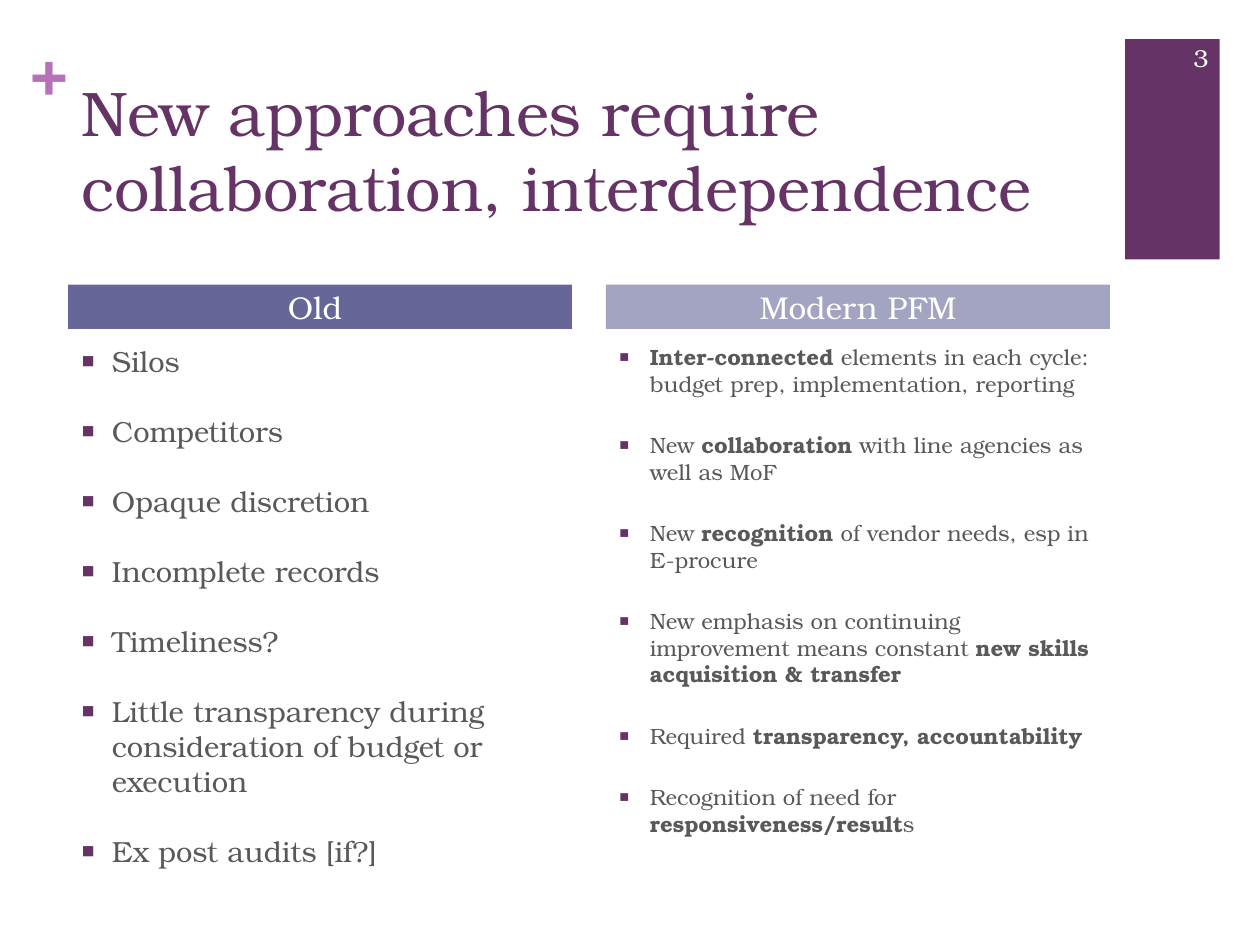
from lxml import etree
from pptx import Presentation
from pptx import util as u
from pptx.dml.color import RGBColor
from pptx.enum import shapes, text
from pptx.oxml import ns

PURPLE, ORCHID, SLATE, LAVENDER = "663366", "B870B8", "666699", "A3A3C2"
GREY, WHITE = "595959", "FFFFFF"
COLUMN_WIDTH = 4

# Asterisks enclose bold words
COLUMNS = [
    {"left": 0.54, "heading": "Old ", "fill": SLATE, "size": 16.6, "points": [
        "Silos",
        "Competitors",
        "Opaque discretion",
        "Incomplete records",
        "Timeliness?",
        "Little transparency during consideration of budget or execution",
        "Ex post audits [if?]",
    ]},
    {"left": 4.81, "heading": "Modern PFM", "fill": LAVENDER, "size": 12.6, "points": [
        "*Inter-connected *elements in each cycle: budget prep, implementation, reporting",
        "New *collaboration* with line agencies as well as MoF",
        "New *recognition *of vendor needs, esp in E-procure",
        "New emphasis on continuing improvement means constant "
        "*new skills acquisition & transfer*",
        "Required *transparency, accountability*",
        "Recognition of need for *responsiveness/result*s",
    ]},
]


def color(value):
    return RGBColor.from_string(value)


def set_all(target, values):
    for name, value in values.items():
        setattr(target, name, value)


class SlideBuilder:
    font = "TeX Gyre Bonum"

    def __init__(self, deck):
        self.page = deck.slides.add_slide(deck.slide_layouts[5])

    def add_text(self, para, content, size, ink, align=text.PP_ALIGN.LEFT):
        para.alignment = align
        for index, part in enumerate(content.split("*")):
            if part:
                span = para.add_run()
                span.text = part
                set_all(span.font, {"name": self.font, "size": u.Pt(size),
                                    "bold": index % 2 == 1})
                span.font.color.rgb = color(ink)

    def frame(self, box, **values):
        defaults = {"word_wrap": True, "auto_size": text.MSO_AUTO_SIZE.NONE,
                    "vertical_anchor": text.MSO_ANCHOR.TOP}
        set_all(box.text_frame, {**defaults, **values})
        return box.text_frame

    def title(self, place, content):
        box = self.page.shapes.title
        names = ("left", "top", "width", "height")
        set_all(box, dict(zip(names, map(u.Inches, place))))
        self.add_text(self.frame(box).paragraphs[0], content, 36, PURPLE)

    def bar(self, place, fill):
        box = self.page.shapes.add_shape(
            shapes.MSO_SHAPE.RECTANGLE, *map(u.Inches, place))
        box.shadow.inherit = False
        box.fill.solid()
        box.fill.fore_color.rgb = color(fill)
        box.line.fill.background()
        return box

    def heading(self, place, content, fill):
        frame = self.frame(self.bar(place, fill), margin_top=0, margin_bottom=0,
                           vertical_anchor=text.MSO_ANCHOR.MIDDLE)
        self.add_text(frame.paragraphs[0], content, 18, WHITE, text.PP_ALIGN.CENTER)

    def label(self, place, content, size, ink, align=text.PP_ALIGN.LEFT, **values):
        box = self.page.shapes.add_textbox(*map(u.Inches, place))
        self.add_text(self.frame(box, **values).paragraphs[0], content, size, ink, align)

    def bullets(self, place, points, size):
        box = self.page.shapes.add_textbox(*map(u.Inches, place))
        frame = self.frame(box)
        for index, point in enumerate(points):
            para = frame.add_paragraph() if index else frame.paragraphs[0]
            para.space_before = u.Pt(20)
            self.add_text(para, point, size, GREY)
            self.add_bullet(para)

    def add_bullet(self, para):
        props = para._p.get_or_add_pPr()
        props.set("marL", str(u.Inches(0.25)))
        props.set("indent", str(u.Inches(-0.25)))
        tint = etree.SubElement(props, ns.qn("a:buClr"))
        etree.SubElement(tint, ns.qn("a:srgbClr"), val=PURPLE)
        etree.SubElement(props, ns.qn("a:buSzPct"), val="75000")
        etree.SubElement(props, ns.qn("a:buFont"), typeface=self.font)
        etree.SubElement(props, ns.qn("a:buChar"), char="■")


def main():
    deck = Presentation()
    set_all(deck, {"slide_width": u.Inches(10), "slide_height": u.Inches(7.5)})
    slide = SlideBuilder(deck)

    # Corner block, plus sign and title
    slide.bar((8.93, 0.31, 0.75, 1.75), PURPLE)
    margins = ("margin_left", "margin_top", "margin_right", "margin_bottom")
    slide.label((0.24, 0.25, 0.29, 0.61), "*+*", 36, ORCHID,
                word_wrap=False, **dict.fromkeys(margins, 0))
    slide.title((0.55, 0.53, 8.26, 1.22),
                "New approaches require collaboration, interdependence")

    # Old and modern columns
    for column in COLUMNS:
        left = column["left"]
        slide.heading((left, 2.26, COLUMN_WIDTH, 0.35), column["heading"], column["fill"])
        slide.bullets((left, 2.68, COLUMN_WIDTH, 4.02), column["points"], column["size"])

    # Slide number
    slide.label((9.08, 0.26, 0.61, 0.4), "3", 14, WHITE, text.PP_ALIGN.RIGHT,
                vertical_anchor=text.MSO_ANCHOR.MIDDLE)

    deck.save("out.pptx")


if __name__ == "__main__":
    main()
